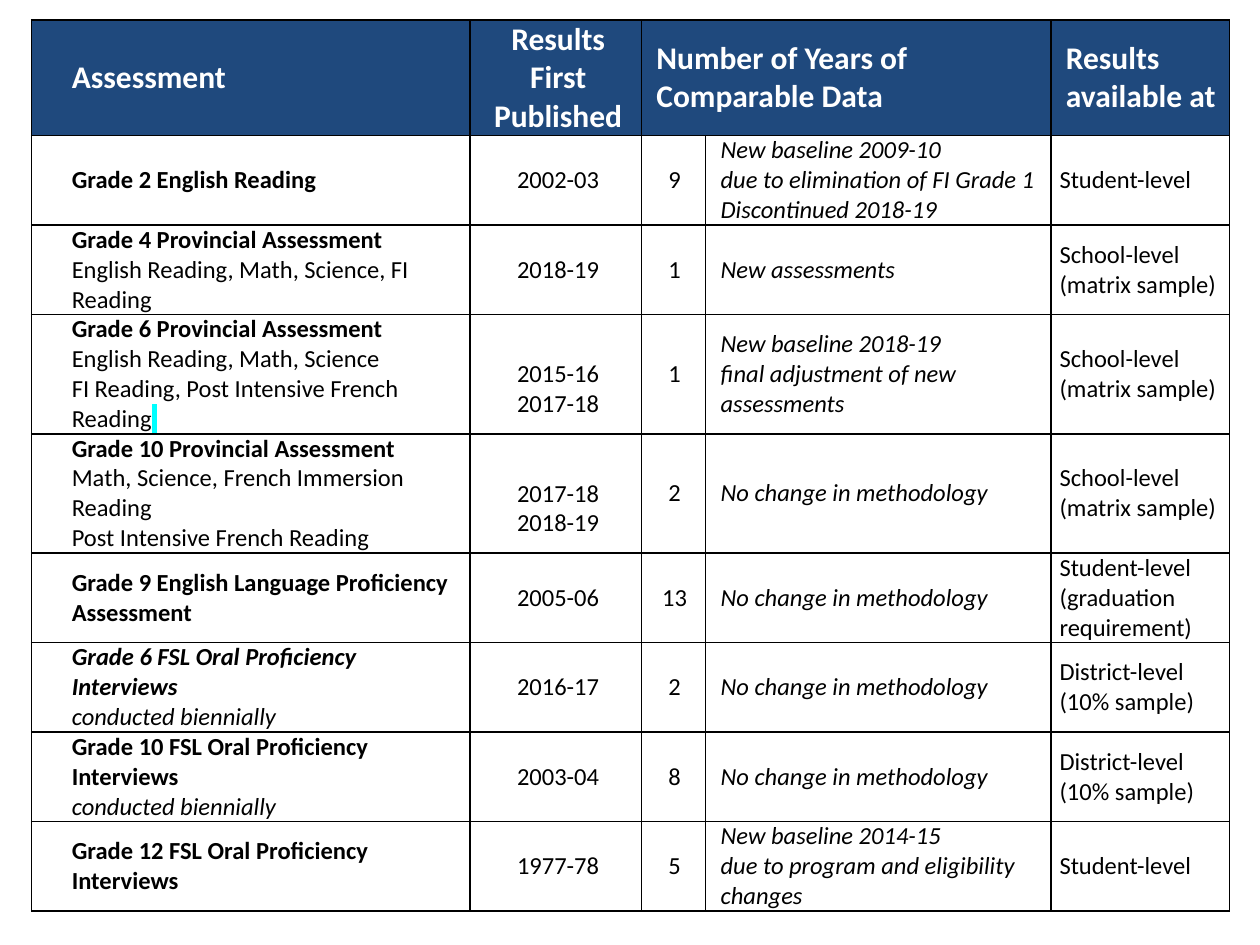
import pptx
import pptx.dml.color
import pptx.enum.text
import pptx.oxml
import pptx.oxml.ns
import pptx.util
from pptx.util import Inches

COLORS = {"header": "1F497D", "header_text": "FFFFFF", "text": "000000",
          "border": "000000", "highlight": "00FFFF"}
STYLES = {
    "header": {"size": pptx.util.Pt(18), "bold": True, "italic": False},
    "plain": {"size": pptx.util.Pt(14), "bold": False, "italic": False},
    "bold": {"size": pptx.util.Pt(14), "bold": True, "italic": False},
    "italic": {"size": pptx.util.Pt(14), "bold": False, "italic": True},
    "bold italic": {"size": pptx.util.Pt(14), "bold": True, "italic": True},
}
LEFT, CENTER = pptx.enum.text.PP_ALIGN.LEFT, pptx.enum.text.PP_ALIGN.CENTER

# Width, left indent and alignment, body style
COLUMNS = [
    (3.48, 0.25, LEFT, "bold"),
    (1.36, 0.04, CENTER, "plain"),
    (0.51, 0.02, CENTER, "plain"),
    (2.74, 0.05, LEFT, "italic"),
    (1.42, 0, LEFT, "plain"),
]
ROW_HEIGHTS = [0.87, 0.66, 0.66, 0.79, 0.79, 0.66, 0.66, 0.66, 0.66]
HEADER_INDENT = 0.05
DATE_OFFSET = 0.24  # one line, so that dates sit beside the subjects

HEADERS = {0: "Assessment", 1: "Results First Published",
           2: "Number of Years of Comparable Data", 4: "Results available at"}
UNCHANGED = ["No change in methodology"]
SCHOOL = ["School-level", "(matrix sample)"]
DISTRICT = ["District-level", "(10% sample)"]
BIENNIAL = ("conducted biennially", "italic")

# A line is text in its column's style, or a (text, style) pair
ASSESSMENTS = [
    [["Grade 2 English Reading"], ["2002-03"], ["9"],
     ["New baseline 2009-10",
      "due to elimination of FI Grade 1 Discontinued 2018-19"],
     ["Student-level"]],
    [["Grade 4 Provincial Assessment",
      ("English Reading, Math, Science, FI Reading", "plain")],
     ["2018-19"], ["1"], ["New assessments"], SCHOOL],
    [["Grade 6 Provincial Assessment",
      ("English Reading, Math, Science", "plain"),
      ("FI Reading, Post Intensive French Reading", "plain")],
     ["2015-16", "2017-18"], ["1"],
     ["New baseline 2018-19", "final adjustment of new assessments"], SCHOOL],
    [["Grade 10 Provincial Assessment",
      ("Math, Science, French Immersion Reading", "plain"),
      ("Post Intensive French Reading", "plain")],
     ["2017-18", "2018-19"], ["2"], UNCHANGED, SCHOOL],
    [["Grade 9 English Language Proficiency Assessment"],
     ["2005-06"], ["13"], UNCHANGED,
     ["Student-level", "(graduation requirement)"]],
    [[("Grade 6 FSL Oral Proficiency Interviews", "bold italic"), BIENNIAL],
     ["2016-17"], ["2"], UNCHANGED, DISTRICT],
    [["Grade 10 FSL Oral Proficiency Interviews", BIENNIAL],
     ["2003-04"], ["8"], UNCHANGED, DISTRICT],
    [["Grade 12 FSL Oral Proficiency Interviews"], ["1977-78"], ["5"],
     ["New baseline 2014-15", "due to program and eligibility changes"],
     ["Student-level"]],
]


def rgb(name):
    return pptx.dml.color.RGBColor.from_string(COLORS[name])


def set_borders(cell):
    properties = cell._tc.get_or_add_tcPr()
    for side in ("lnL", "lnR", "lnT", "lnB"):
        properties.append(pptx.oxml.parse_xml(
            f'<a:{side} {pptx.oxml.ns.nsdecls("a")} w="{pptx.util.Pt(1)}">'
            f'<a:solidFill><a:srgbClr val="{COLORS["border"]}"/></a:solidFill>'
            f'</a:{side}>'))


def add_run(paragraph, text, style, color):
    run = paragraph.add_run()
    run.text = text
    for attribute, value in STYLES[style].items():
        setattr(run.font, attribute, value)
    run.font.name = "Calibri"
    run.font.color.rgb = rgb(color)
    return run


def add_highlighted_space(paragraph):
    properties = add_run(paragraph, " ", "plain", "text")._r.get_or_add_rPr()
    properties.find(pptx.oxml.ns.qn("a:latin")).addprevious(pptx.oxml.parse_xml(
        f'<a:highlight {pptx.oxml.ns.nsdecls("a")}>'
        f'<a:srgbClr val="{COLORS["highlight"]}"/></a:highlight>'))


def fill_cell(cell, lines, style, indent, alignment, color="text", top=0):
    layout = {"margin_left": Inches(0.07), "margin_right": Inches(0.07),
              "margin_top": Inches(top), "margin_bottom": 0,
              "vertical_anchor": pptx.enum.text.MSO_ANCHOR.MIDDLE}
    for attribute, value in layout.items():
        setattr(cell, attribute, value)
    set_borders(cell)
    frame = cell.text_frame
    for number, line in enumerate(lines):
        text, line_style = line if isinstance(line, tuple) else (line, style)
        paragraph = frame.add_paragraph() if number else frame.paragraphs[0]
        paragraph.alignment = alignment
        properties = paragraph._p.get_or_add_pPr()
        properties.set("marL", str(Inches(indent)))
        properties.set("indent", "0")
        add_run(paragraph, text, line_style, color)


def fill_header(table):
    table.cell(0, 2).merge(table.cell(0, 3))
    for column, text in HEADERS.items():
        _, indent, alignment, _ = COLUMNS[column]
        cell = table.cell(0, column)
        fill_cell(cell, [text], "header", indent if column < 2 else HEADER_INDENT,
                  LEFT if column == 2 else alignment, "header_text")
        cell.fill.solid()
        cell.fill.fore_color.rgb = rgb("header")


def fill_body(table):
    for row, assessment in enumerate(ASSESSMENTS, start=1):
        for column, lines in enumerate(assessment):
            _, indent, alignment, style = COLUMNS[column]
            cell = table.cell(row, column)
            two_dates = column == 1 and len(lines) > 1
            fill_cell(cell, lines, style, indent, alignment,
                      top=DATE_OFFSET if two_dates else 0)
            cell.fill.background()
    add_highlighted_space(table.cell(3, 0).text_frame.paragraphs[-1])


def add_assessment_table(slide, left, top, width, height):
    table = slide.shapes.add_table(len(ROW_HEIGHTS), len(COLUMNS),
                                   left, top, width, height).table
    table.first_row = table.horz_banding = False
    for column, (column_width, *_) in zip(table.columns, COLUMNS):
        column.width = Inches(column_width)
    for row, row_height in zip(table.rows, ROW_HEIGHTS):
        row.height = Inches(row_height)
    fill_header(table)
    fill_body(table)


def main():
    presentation = pptx.Presentation()
    presentation.slide_width, presentation.slide_height = Inches(10), Inches(7.5)
    slide = presentation.slides.add_slide(presentation.slide_layouts[6])
    add_assessment_table(slide, Inches(0.25), Inches(0.16),
                         Inches(9.5), Inches(6.97))
    presentation.save("out.pptx")


if __name__ == "__main__":
    main()
